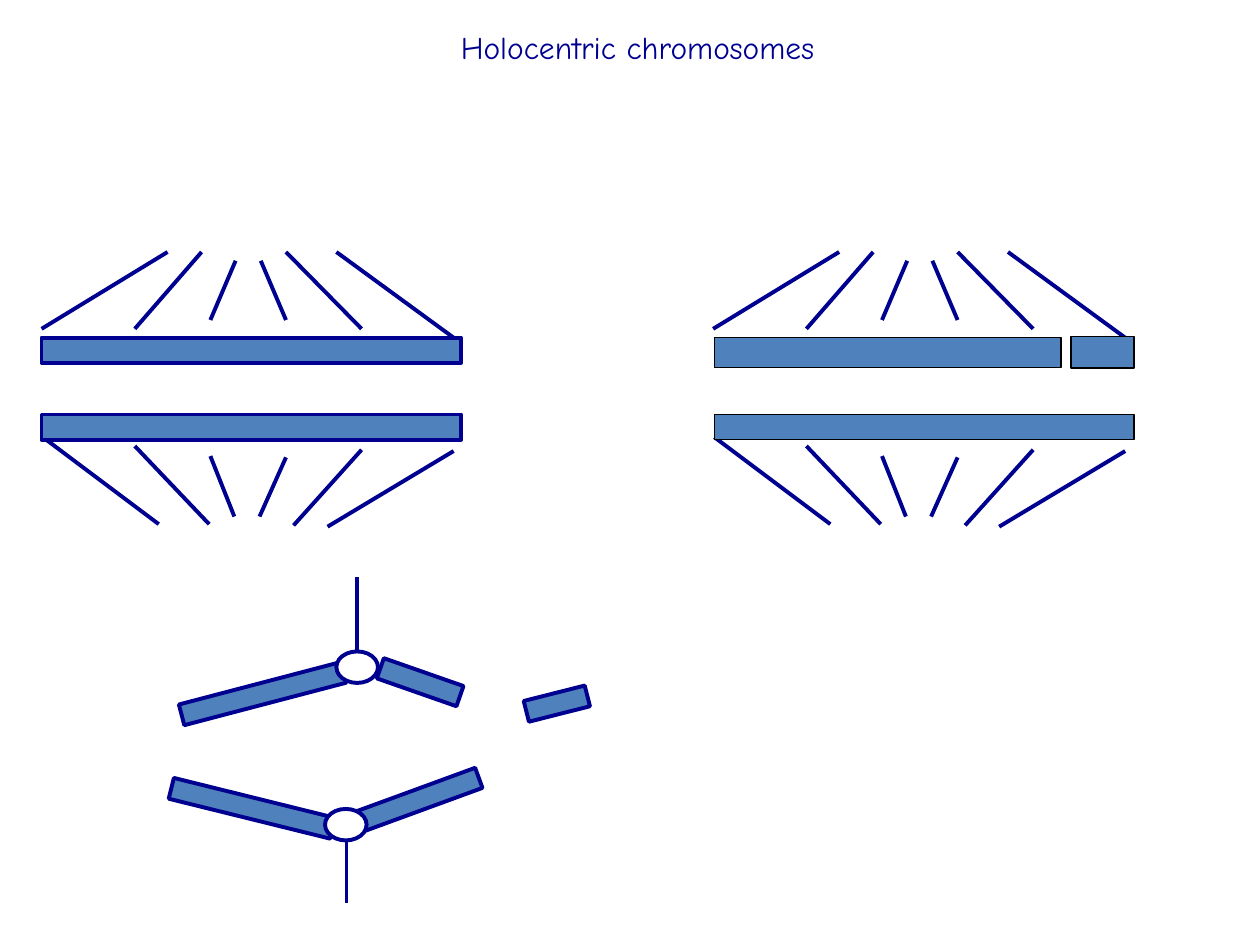
from dataclasses import dataclass

from lxml import etree
from pptx import Presentation
from pptx import util as u
from pptx.dml.color import RGBColor
from pptx.enum import shapes, text
from pptx.oxml.ns import qn


@dataclass(frozen=True)
class Theme:
    navy: RGBColor = RGBColor(0x00, 0x00, 0x90)
    blue: RGBColor = RGBColor(0x4F, 0x81, 0xBD)
    black: RGBColor = RGBColor(0, 0, 0)
    white: RGBColor = RGBColor(0xFF, 0xFF, 0xFF)
    font: str = "Comic Neue"
    title_size: float = 18
    thick: float = 2.25
    thin: float = 0.75


theme = Theme()
RECTANGLE = shapes.MSO_SHAPE.RECTANGLE
OVAL = shapes.MSO_SHAPE.OVAL


def add_part(parent, kind, box, rotation=0, fill=theme.blue, line=theme.navy, weight=theme.thick):
    """Add a filled chromosome part; box is left, top, width, height in inches."""
    shape = parent.add_shape(kind, *map(u.Inches, box))
    shape.rotation = rotation
    shape.shadow.inherit = False
    shape.fill.solid()
    shape.fill.fore_color.rgb = fill
    shape.line.color.rgb = line
    shape.line.width = u.Pt(weight)


def add_fibres(parent, fibres, offset=0):
    """Add spindle fibres given as (x1, y1, x2, y2), moved right by offset."""
    for x1, y1, x2, y2 in fibres:
        ends = (x1 + offset, y1, x2 + offset, y2)
        fibre = parent.add_connector(shapes.MSO_CONNECTOR.STRAIGHT, *map(u.Inches, ends))
        fibre.line.color.rgb = theme.navy
        fibre.line.width = u.Pt(theme.thick)
        etree.SubElement(fibre._element.spPr, qn("a:effectLst"))


presentation = Presentation()
presentation.slide_width = u.Inches(10)
presentation.slide_height = u.Inches(7.5)
slide = presentation.slides.add_slide(presentation.slide_layouts[6])
canvas = slide.shapes

# Title
title = canvas.add_textbox(*map(u.Inches, (3.45, 0.17, 3.22, 0.4)))
title.text_frame.word_wrap = False
title.text_frame.auto_size = text.MSO_AUTO_SIZE.SHAPE_TO_FIT_TEXT
paragraph = title.text_frame.paragraphs[0]
paragraph.text = "Holocentric chromosomes"
paragraph.alignment = text.PP_ALIGN.CENTER
paragraph.font.name = theme.font
paragraph.font.size = u.Pt(theme.title_size)
paragraph.font.color.rgb = theme.navy

# Fibres shared by the intact and the broken holocentric pair
upper_fibres = [
    (0.33, 2.61, 1.33, 2), (3.6, 2.68, 2.67, 2), (1.07, 2.61, 1.6, 2),
    (2.87, 2.61, 2.27, 2), (1.67, 2.54, 1.87, 2.07), (2.27, 2.54, 2.07, 2.07),
]
lower_fibres = [
    (3.6, 3.58, 2.6, 4.18), (0.34, 3.47, 1.26, 4.16), (2.87, 3.57, 2.33, 4.17),
    (1.07, 3.54, 1.66, 4.16), (2.27, 3.63, 2.06, 4.1), (1.67, 3.62, 1.86, 4.1),
]
pair_offset = 5.33

# Intact holocentric pair
intact = canvas.add_group_shape().shapes
add_part(intact, RECTANGLE, (0.33, 2.68, 3.33, 0.2))
add_fibres(intact, upper_fibres + lower_fibres)
add_part(intact, RECTANGLE, (0.33, 3.29, 3.33, 0.2))

# Broken holocentric pair: the fragment keeps its own fibre
thin_outline = {"line": theme.black, "weight": theme.thin}
add_part(canvas, RECTANGLE, (5.67, 2.68, 2.75, 0.24), **thin_outline)
for fibres in (upper_fibres, lower_fibres):
    add_fibres(canvas.add_group_shape().shapes, fibres, pair_offset)
for box in ((5.67, 3.29, 3.33, 0.2), (8.5, 2.67, 0.5, 0.25)):
    add_part(canvas, RECTANGLE, box, **thin_outline)

# Upper monocentric chromosome with a lost fragment
monocentric = canvas.add_group_shape().shapes
add_part(monocentric, RECTANGLE, (1.42, 5.42, 1.33, 0.17), rotation=345.3)
add_part(monocentric, OVAL, (2.67, 5.17, 0.33, 0.25), fill=theme.white)
add_part(monocentric, RECTANGLE, (3, 5.33, 0.67, 0.17), rotation=19.3)
add_fibres(monocentric, [(2.83, 5.17, 2.83, 4.58)])
add_part(canvas, RECTANGLE, (4.17, 5.5, 0.5, 0.17), rotation=345.8)

# Lower monocentric chromosome
add_part(canvas, RECTANGLE, (2.83, 6.26, 1, 0.17), rotation=159.9)
add_part(canvas, RECTANGLE, (1.34, 6.33, 1.32, 0.17), rotation=193.9)
add_fibres(canvas, [(2.75, 6.67, 2.75, 7.17)])
add_part(canvas, OVAL, (2.58, 6.42, 0.33, 0.25), fill=theme.white)

presentation.save("out.pptx")
